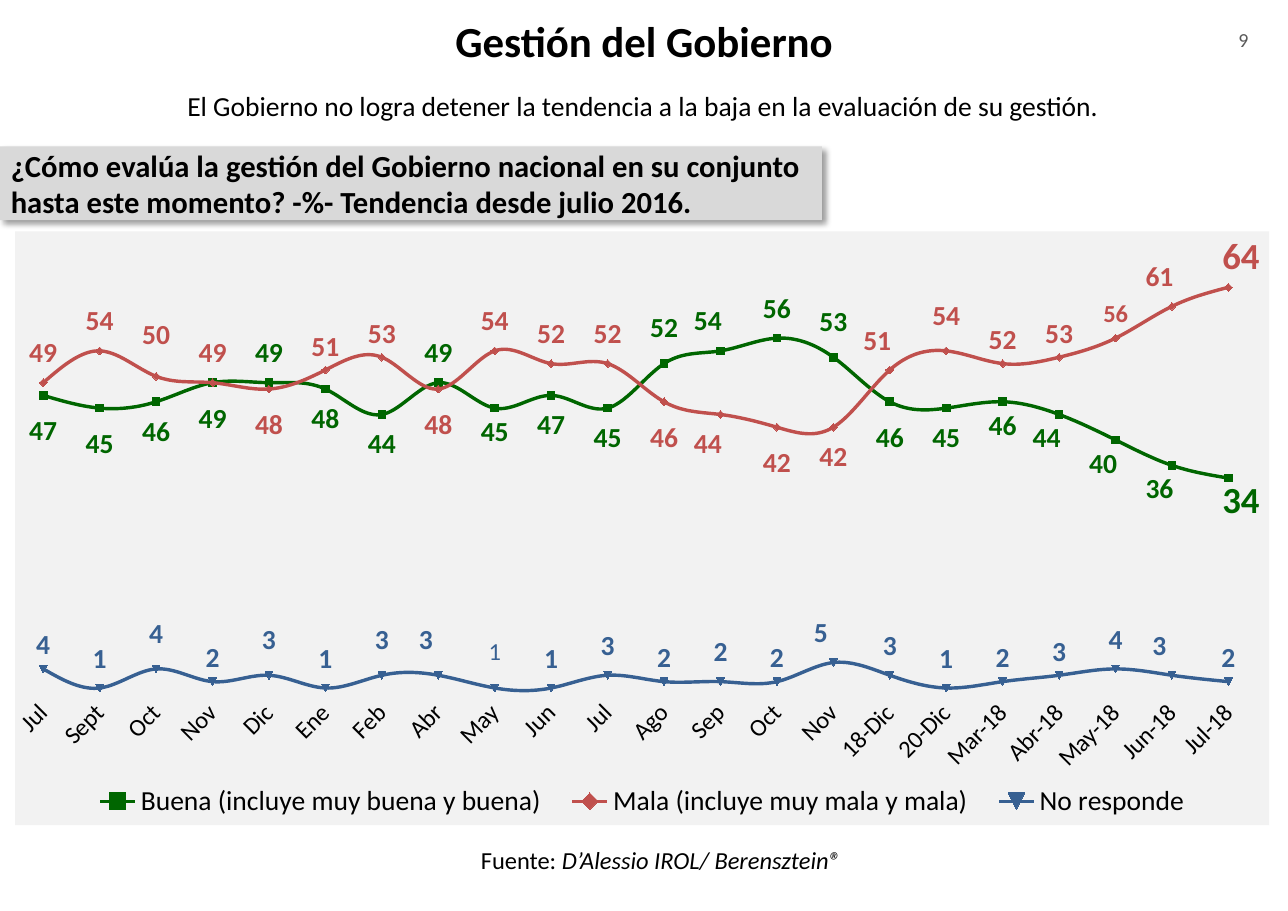
import pptx
import pptx.chart.data
import pptx.dml.color
import pptx.enum.chart
import pptx.enum.shapes
import pptx.enum.text
import pptx.oxml
import pptx.oxml.ns
import pptx.util

Inches, Pt = pptx.util.Inches, pptx.util.Pt
RGB = pptx.dml.color.RGBColor
qn, nsdecls = pptx.oxml.ns.qn, pptx.oxml.ns.nsdecls
PP_ALIGN, ANCHOR = pptx.enum.text.PP_ALIGN, pptx.enum.text.MSO_ANCHOR
XL = pptx.enum.chart

BLACK = RGB(0x00, 0x00, 0x00)
GRAY = RGB(0x59, 0x59, 0x59)
BAND = RGB(0xD9, 0xD9, 0xD9)
GREEN = RGB(0x00, 0x66, 0x00)
RED = RGB(0xC0, 0x50, 0x4D)
BLUE = RGB(0x37, 0x60, 0x92)

prs = pptx.Presentation()
prs.slide_width, prs.slide_height = Inches(11.69), Inches(8.27)
s = prs.slides.add_slide(prs.slide_layouts[5])


def write(sp, runs, size, color=BLACK, bold=False, align=PP_ALIGN.CENTER):
    """Fill a shape with one paragraph; runs are (text, italic) pairs."""
    tf = sp.text_frame
    tf.word_wrap = True
    tf.auto_size = pptx.enum.text.MSO_AUTO_SIZE.NONE
    tf.vertical_anchor = ANCHOR.MIDDLE
    p = tf.paragraphs[0]
    p.alignment = align
    p.font.name, p.font.size, p.font.bold = "Calibri", Pt(size), bold
    p.font.color.rgb = color
    for text, italic in runs:
        r = p.add_run()
        r.text = text
        if italic:
            r.font.italic = True


def manual_layout(parent, index, **parts):
    """Put a chart layout into parent at index, in place of any other."""
    for old in parent.findall(qn("c:layout")):
        parent.remove(old)
    inner = "".join(f'<c:{tag} val="{val}"/>' for tag, val in parts.items())
    parent.insert(index, pptx.oxml.parse_xml(
        f'<c:layout {nsdecls("c")}><c:manualLayout>{inner}</c:manualLayout></c:layout>'))


# Title
title = s.shapes.title
title.left, title.top, title.width, title.height = map(Inches, (0, -0.1, 11.69, 0.94))
write(title, [("Gestión del Gobierno", False)], 28, bold=True)

# Page number, subtitle and source
texts = [
    ((10.84, 0.14, 0.89, 0.44), [("9", False)], 13, GRAY),
    ((-0.01, 0.76, 11.69, 0.4),
     [("El Gobierno no logra detener la tendencia a la baja en la evaluación de su gestión.", False)],
     18, BLACK),
    ((4.19, 7.62, 3.62, 0.37),
     [("Fuente: ", False), ("D’Alessio IROL/ Berensztein®", True)], 16, BLACK),
]
for box, runs, size, color in texts:
    write(s.shapes.add_textbox(*map(Inches, box)), runs, size, color)

# Question band with its shadow
band = s.shapes.add_shape(pptx.enum.shapes.MSO_SHAPE.RECTANGLE,
                          0, Inches(1.33), Inches(7.46), Inches(0.67))
band.fill.solid()
band.fill.fore_color.rgb = BAND
band.line.fill.background()
band._element.spPr.append(pptx.oxml.parse_xml(
    f'<a:effectLst {nsdecls("a")}><a:outerShdw blurRad="50800" dist="38100" dir="2700000" '
    'algn="tl" rotWithShape="0"><a:srgbClr val="000000"><a:alpha val="40000"/></a:srgbClr>'
    '</a:outerShdw></a:effectLst>'))
write(band, [("¿Cómo evalúa la gestión del Gobierno nacional en su conjunto hasta este "
              "momento? -%- Tendencia desde julio 2016.", False)],
      20, bold=True, align=PP_ALIGN.LEFT)

# Chart data; label shifts are percentages of the chart's height and width
months = ["Jul", "Sept", "Oct", "Nov", "Dic", "Ene", "Feb", "Abr", "May", "Jun", "Jul",
          "Ago", "Sep", "Oct", "Nov", "18-Dic", "20-Dic", "Mar-18", "Abr-18", "May-18",
          "Jun-18", "Jul-18"]
LAST = len(months) - 1
answers = [
    ("Buena (incluye muy buena y buena)", GREEN,
     [47, 45, 46, 49, 49, 48, 44, 49, 45, 47, 45, 52, 54, 56, 53, 46, 45, 46, 44, 40, 36, 34],
     [6, 6, 5, 6, -5, 5, 5, -5, 4, 5, 5, -6, -5, -5, -6, 6, 5, 4, 4, 4, 4, 4],
     {12: -1, 18: -1, 19: -1, 20: -1, LAST: 1}, {}),
    ("Mala (incluye muy mala y mala)", RED,
     [49, 54, 50, 49, 48, 51, 53, 48, 54, 52, 52, 46, 44, 42, 42, 51, 54, 52, 53, 56, 61, 64],
     [-5, -5, -7, -5, 6, -4, -4, 6, -5, -5, -5, 6, 5, 6, 5, -5, -6, -4, -4, -4, -5, -5],
     {12: -1, 15: -1, 20: -1, LAST: 1}, {19: 16}),
    ("No responde", BLUE,
     [4, 1, 4, 2, 3, 1, 3, 3, 1, 1, 3, 2, 2, 2, 5, 3, 1, 2, 3, 4, 3, 2],
     [-4, -5, -6, -4, -6, -5, -6, -6, -6, -5, -5, -4, -5, -4, -5, -5, -5, -4, -4, -5, -5, -4],
     {7: -1, 14: -1, 20: -1}, {8: 16}),
]
data = pptx.chart.data.CategoryChartData()
data.categories = months
for name, _, values, *_ in answers:
    data.add_series(name, values)

# Trend chart
chart = s.shapes.add_chart(XL.XL_CHART_TYPE.LINE_MARKERS, Inches(0.13), Inches(2.1),
                           Inches(11.39), Inches(5.39), data).chart
chart.font.name, chart.font.size = "Calibri", Pt(18)
chart.font.color.rgb = BLACK
chart.has_title = False
chart.plots[0].vary_by_categories = False

# Legend in one row below the months
chart.has_legend = True
chart.legend.position = XL.XL_LEGEND_POSITION.BOTTOM
chart.legend.include_in_layout = False
manual_layout(chart.legend._element, 1, xMode="edge", yMode="edge",
              x=0.05, y=0.92, w=0.9, h=0.08)

# Axes
va, ca = chart.value_axis, chart.category_axis
va.minimum_scale, va.maximum_scale = 0, 70
va.has_major_gridlines = False
va.visible = False
ca.major_tick_mark = XL.XL_TICK_MARK.NONE
ca.format.line.fill.background()
ca.tick_labels.font.size = Pt(16)
ca._element.find(qn("c:txPr")).find(qn("a:bodyPr")).set("rot", "-2700000")

# Chart background and plot area
root = chart._chartSpace.find(qn("c:chart"))
root.addnext(pptx.oxml.parse_xml(
    f'<c:spPr {nsdecls("c", "a")}><a:solidFill><a:srgbClr val="F2F2F2"/></a:solidFill>'
    '<a:ln><a:noFill/></a:ln></c:spPr>'))
manual_layout(root.find(qn("c:plotArea")), 0, layoutTarget="inner", xMode="edge",
              yMode="edge", x=0, y=0.03, w=0.99, h=0.75)

# Series lines, markers and shifted labels
for ser, (_, color, _, rises, nudges, small) in zip(chart.plots[0].series, answers):
    ser.smooth = True
    ser.format.line.width = Pt(2.25)
    ser.format.line.color.rgb = color
    ser.marker.style = XL.XL_MARKER_STYLE.AUTOMATIC
    ser.marker.size = 5
    ser.marker.format.fill.solid()
    ser.marker.format.fill.fore_color.rgb = color
    ser.marker.format.line.color.rgb = color
    ser.data_labels.show_value = True
    for i in range(len(months)):
        label = ser.points[i].data_label
        big = i == LAST and color != BLUE
        label.font.name = "Calibri"
        label.font.size = Pt(24 if big else small.get(i, 18))
        label.font.bold = not (color == BLUE and i in small)
        label.font.color.rgb = color
        label.position = XL.XL_LABEL_POSITION.CENTER
    for i, dLbl in enumerate(ser._element.iter(qn("c:dLbl"))):
        manual_layout(dLbl, 1, x=nudges.get(i, 0) / 100, y=rises[i] / 100)

    # No leader lines between points and labels
    dLbls = ser._element.find(qn("c:dLbls"))
    for lines in dLbls.findall(qn("c:showLeaderLines")):
        lines.set("val", "0")
    dLbls.append(pptx.oxml.parse_xml(
        f'<c:extLst {nsdecls("c")}><c:ext uri="{{CE6537A1-D6FC-4f65-9D91-7224C49458BB}}" '
        'xmlns:c15="http://schemas.microsoft.com/office/drawing/2012/chart">'
        '<c15:showLeaderLines val="0"/></c:ext></c:extLst>'))

prs.save("out.pptx")
